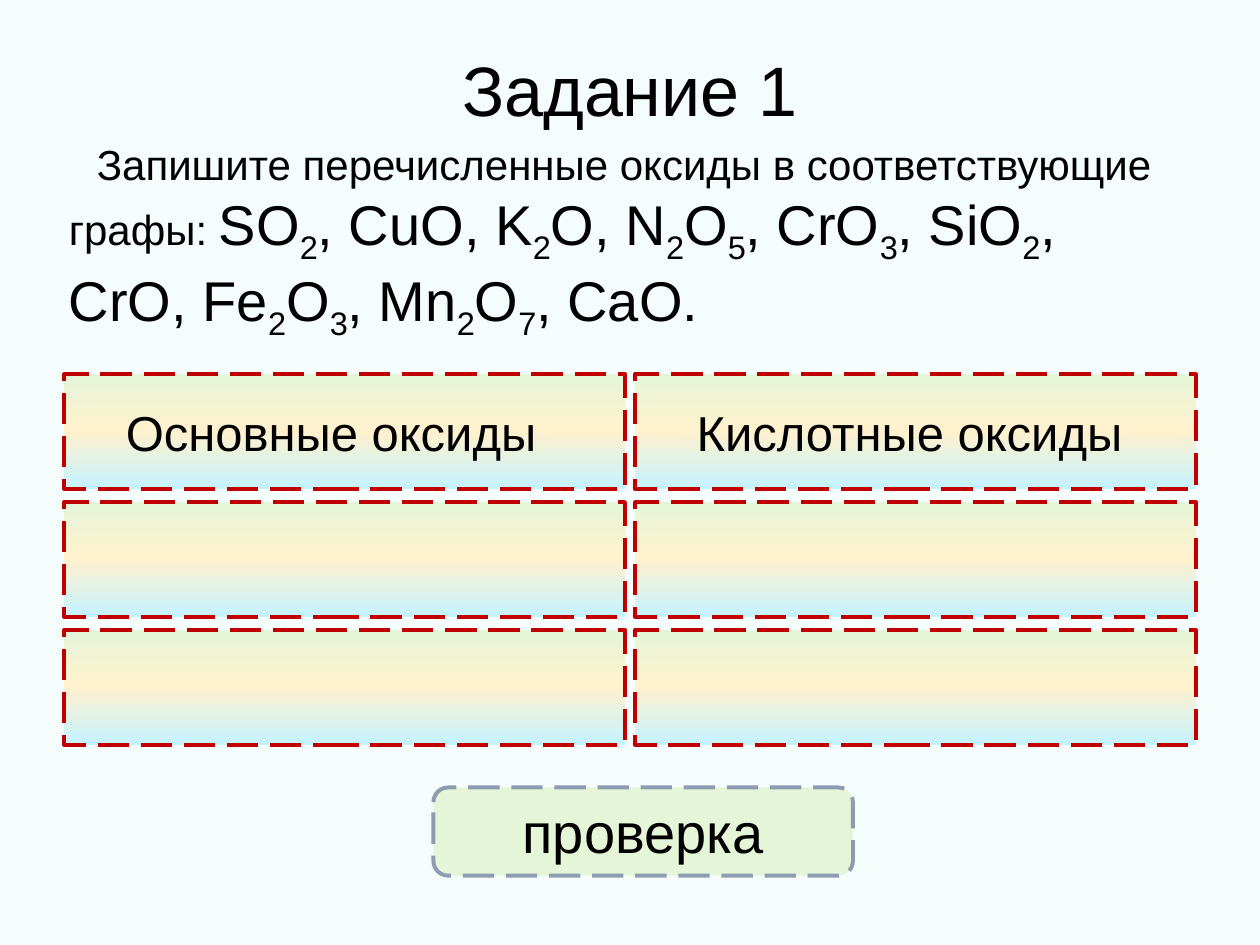
from copy import deepcopy
from dataclasses import dataclass
from itertools import groupby

from pptx import Presentation
from pptx.dml.color import RGBColor
from pptx.enum.dml import MSO_LINE
from pptx.enum.shapes import MSO_SHAPE
from pptx.enum.text import MSO_ANCHOR, PP_ALIGN
from pptx.oxml.ns import qn
from pptx.shapes.autoshape import Shape
from pptx.text.text import TextFrame, _Paragraph
from pptx.util import Inches, Pt


@dataclass(frozen=True)
class Theme:
    font: str = "Arial"
    text: str = "000000"
    background: str = "F4FDFC"
    cell_stops: tuple[str, ...] = ("E5F6D8", "FFF1CE", "C5F3FF")
    cell_border: str = "C00000"
    button_fill: str = "E5F6D8"
    button_border: str = "8E9BB0"
    border_width: float = 2.25
    title_size: int = 40
    task_size: int = 24
    header_size: int = 28
    formula_size: int = 32


@dataclass(frozen=True)
class Box:
    left: float
    top: float
    width: float
    height: float

    def place(self) -> tuple[int, int, int, int]:
        """Give the box as lengths for a new shape."""
        return tuple(Inches(n) for n in (self.left, self.top, self.width, self.height))


THEME = Theme()
HEADERS = ("Основные оксиды", "Кислотные оксиды")
ROW_TEXTS = (HEADERS, ("", ""), ("", ""))
FIRST_CELL = Box(0.51, 2.97, 4.45, 0.91)
COLUMN_STEP, ROW_STEP = 4.53, 1.015
HEADER_INDENT = 0.39


def colour(value: str) -> RGBColor:
    """Turn a hex value into a colour."""
    return RGBColor.from_string(value)


def add_run(paragraph: _Paragraph, text: str, size: int, subscript: bool = False) -> None:
    """Add one formatted run."""
    run = paragraph.add_run()
    run.text = text
    run.font.name = THEME.font
    run.font.size = Pt(size)
    run.font.color.rgb = colour(THEME.text)
    if subscript:
        run.font._element.set("baseline", "-25000")


def add_formulas(paragraph: _Paragraph, formulas: str) -> None:
    """Add chemical formulas with their digits as subscripts."""
    for is_index, characters in groupby(formulas, str.isdigit):
        add_run(paragraph, "".join(characters), THEME.formula_size, is_index)


def add_panel(shapes, kind: MSO_SHAPE, box: Box) -> Shape:
    """Add a shape without a shadow and with its text in the middle."""
    panel = shapes.add_shape(kind, *box.place())
    panel.shadow.inherit = False
    panel.text_frame.word_wrap = True
    panel.text_frame.vertical_anchor = MSO_ANCHOR.MIDDLE
    return panel


def set_border(panel: Shape, border: str) -> None:
    """Give a panel a long-dashed border."""
    panel.line.color.rgb = colour(border)
    panel.line.width = Pt(THEME.border_width)
    panel.line.dash_style = MSO_LINE.LONG_DASH


def fill_gradient(panel: Shape, colours: tuple[str, ...]) -> None:
    """Fill a panel from top to bottom with evenly spaced colours."""
    panel.fill.gradient()
    panel.fill.gradient_angle = 270
    stop_list = panel._element.spPr.find(qn("a:gradFill")).find(qn("a:gsLst"))
    for _ in colours[2:]:
        stop_list.append(deepcopy(stop_list[-1]))
    for index, (stop, value) in enumerate(zip(panel.fill.gradient_stops, colours)):
        stop.position = index / (len(colours) - 1)
        stop.color.rgb = colour(value)


def add_cell(shapes, box: Box, text: str) -> None:
    """Add one answer cell, with a heading if it has one."""
    cell = add_panel(shapes, MSO_SHAPE.RECTANGLE, box)
    fill_gradient(cell, THEME.cell_stops)
    set_border(cell, THEME.cell_border)
    if text:
        heading = cell.text_frame.paragraphs[0]
        heading.alignment = PP_ALIGN.LEFT
        heading._p.get_or_add_pPr().set("indent", str(Inches(HEADER_INDENT)))
        add_run(heading, text, THEME.header_size)


def add_rows(shapes) -> None:
    """Add the answer grid, one group for each row."""
    for row, texts in enumerate(ROW_TEXTS):
        group = shapes.add_group_shape()
        for column, text in enumerate(texts):
            box = Box(FIRST_CELL.left + column * COLUMN_STEP,
                      FIRST_CELL.top + row * ROW_STEP,
                      FIRST_CELL.width, FIRST_CELL.height)
            add_cell(group.shapes, box, text)


def write_task(frame: TextFrame) -> None:
    """Write the task and its list of oxides."""
    request = frame.paragraphs[0]
    request.alignment = PP_ALIGN.CENTER
    add_run(request, "Запишите перечисленные оксиды в соответствующие ", THEME.task_size)
    first_oxides, last_oxides = frame.add_paragraph(), frame.add_paragraph()
    first_oxides.alignment = last_oxides.alignment = PP_ALIGN.LEFT
    add_run(first_oxides, "графы: ", THEME.task_size)
    add_formulas(first_oxides, "SO2, CuO, K2O, N2O5, CrO3, SiO2,")
    add_formulas(last_oxides, "CrO, Fe2O3, Mn2O7, CaO.")


def main() -> None:
    """Build the slide and save it."""
    presentation = Presentation()
    presentation.slide_width, presentation.slide_height = Inches(10), Inches(7.5)
    slide = presentation.slides.add_slide(presentation.slide_layouts[5])
    slide.background.fill.solid()
    slide.background.fill.fore_color.rgb = colour(THEME.background)

    title = slide.shapes.title
    title.left, title.top, title.width, title.height = Box(0.5, 0.23, 9, 0.94).place()
    title.text_frame.vertical_anchor = MSO_ANCHOR.MIDDLE
    title.text_frame.paragraphs[0].alignment = PP_ALIGN.CENTER
    add_run(title.text_frame.paragraphs[0], "Задание 1", THEME.title_size)

    task = add_panel(slide.shapes, MSO_SHAPE.ROUNDED_RECTANGLE, Box(0.39, 1.09, 9.22, 1.64))
    task.adjustments[0] = 0.12
    task.fill.background()
    task.line.fill.background()
    write_task(task.text_frame)

    add_rows(slide.shapes)

    check = add_panel(slide.shapes, MSO_SHAPE.ROUNDED_RECTANGLE, Box(3.44, 6.25, 3.33, 0.7))
    check.fill.solid()
    check.fill.fore_color.rgb = colour(THEME.button_fill)
    set_border(check, THEME.button_border)
    check.text_frame.paragraphs[0].alignment = PP_ALIGN.CENTER
    add_run(check.text_frame.paragraphs[0], "проверка", THEME.formula_size)

    presentation.save("out.pptx")


if __name__ == "__main__":
    main()
